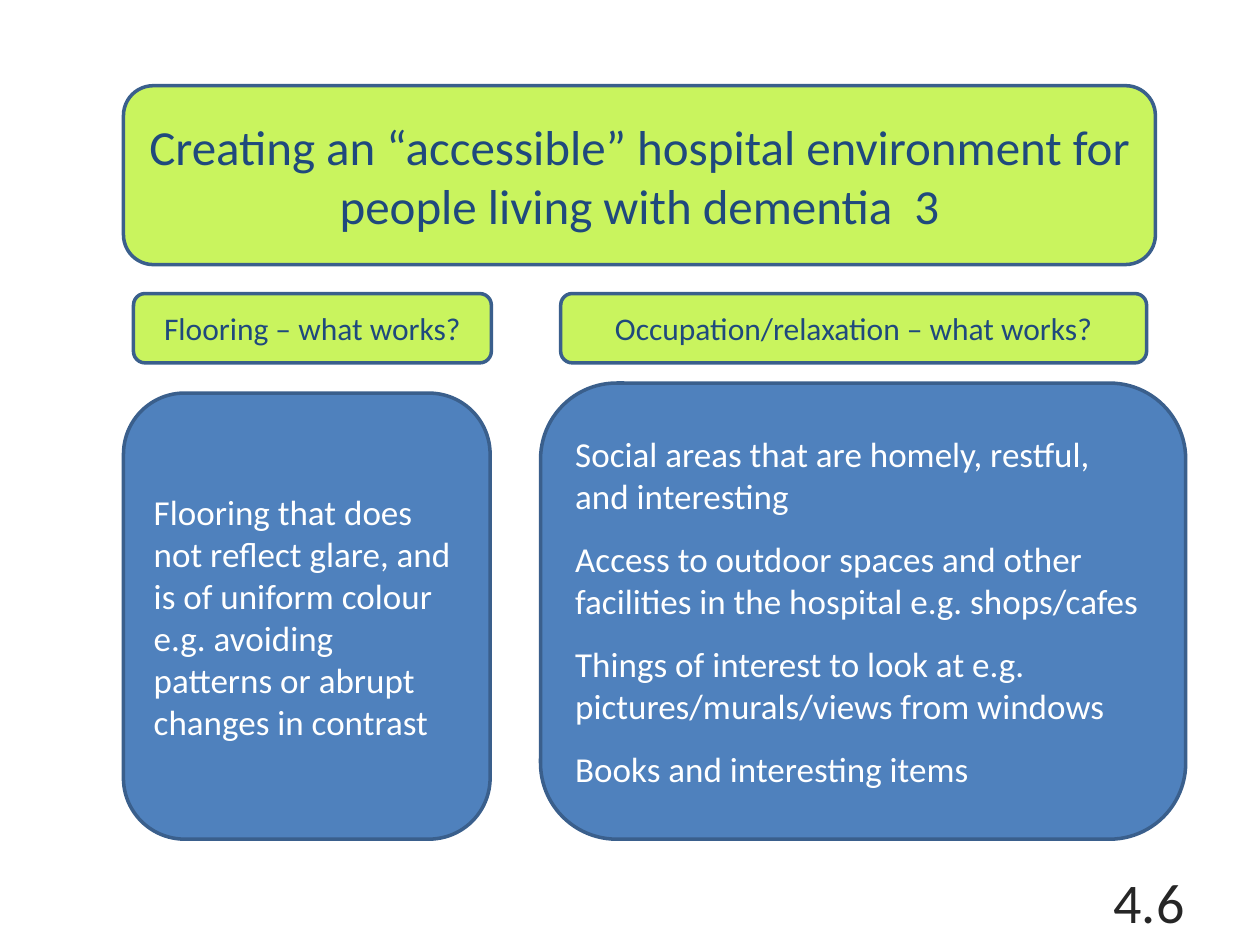
from pptx import Presentation
from pptx.dml.color import RGBColor
from pptx.enum.shapes import MSO_SHAPE
from pptx.enum.text import MSO_ANCHOR, PP_ALIGN
from pptx.util import Inches, Pt

COLORS = {"lime": "C9F45E", "blue": "4F81BD", "border": "3A5F8C",
          "navy": "1F497D", "white": "FFFFFF", "dark": "262626"}
COLS, ROWS = 10, 7.5

prs = Presentation()
prs.slide_width, prs.slide_height = Inches(COLS), Inches(ROWS)
col, row = prs.slide_width / COLS, prs.slide_height / ROWS
s = prs.slides.add_slide(prs.slide_layouts[6])


def rgb(name):
    return RGBColor.from_string(COLORS[name])


def write(sp, lines, size, color, align, gap=0):
    """Fill a shape with one paragraph per line, each with a gap above it."""
    tf = sp.text_frame
    tf.word_wrap = True
    tf.vertical_anchor = MSO_ANCHOR.MIDDLE
    tf.text = "\n".join(lines)
    for p in tf.paragraphs:
        p.alignment = align
        p.space_before = Pt(gap)
        p.font.name = "Calibri"
        p.font.size = Pt(size)
        p.font.color.rgb = rgb(color)


header_row, header_height = 2.33, 0.55
title = ["Creating an “accessible” hospital environment for people living with dementia  3"]
flooring = ["Flooring that does not reflect glare, and is of uniform colour "
            "e.g. avoiding patterns or abrupt changes in contrast"]
occupation = ["Social areas that are homely, restful, and interesting",
              "Access to outdoor spaces and other facilities in the hospital e.g. shops/cafes",
              "Things of interest to look at e.g. pictures/murals/views from windows",
              "Books and interesting items"]

# left, top, width, height in columns and rows; fill, text, size, colour, alignment, gap
boxes = [
    (0.98, 0.68, 8.19, 1.42, "lime", title, 28, "navy", PP_ALIGN.CENTER, 0),
    (0.98, 3.12, 2.91, 3.54, "blue", flooring, 20, "white", PP_ALIGN.LEFT, 0),
    (4.29, 3.04, 5.12, 3.62, "blue", occupation, 20, "white", PP_ALIGN.LEFT, 12),
    (1.06, header_row, 2.84, header_height, "lime",
     ["Flooring – what works?"], 18, "navy", PP_ALIGN.CENTER, 0),
    (4.45, header_row, 4.65, header_height, "lime",
     ["Occupation/relaxation – what works?"], 18, "navy", PP_ALIGN.CENTER, 0),
]
for x, y, w, h, fill, lines, size, color, align, gap in boxes:
    sp = s.shapes.add_shape(MSO_SHAPE.ROUNDED_RECTANGLE, int(x * col), int(y * row),
                            int(w * col), int(h * row))
    sp.shadow.inherit = False
    sp.fill.solid()
    sp.fill.fore_color.rgb = rgb(fill)
    sp.line.color.rgb = rgb("border")
    sp.line.width = Pt(2)
    write(sp, lines, size, color, align, gap)

number = s.shapes.add_textbox(int(7.17 * col), int(6.95 * row), int(2.33 * col), int(0.4 * row))
write(number, ["4.6"], 32, "dark", PP_ALIGN.RIGHT)

prs.save("out.pptx")
